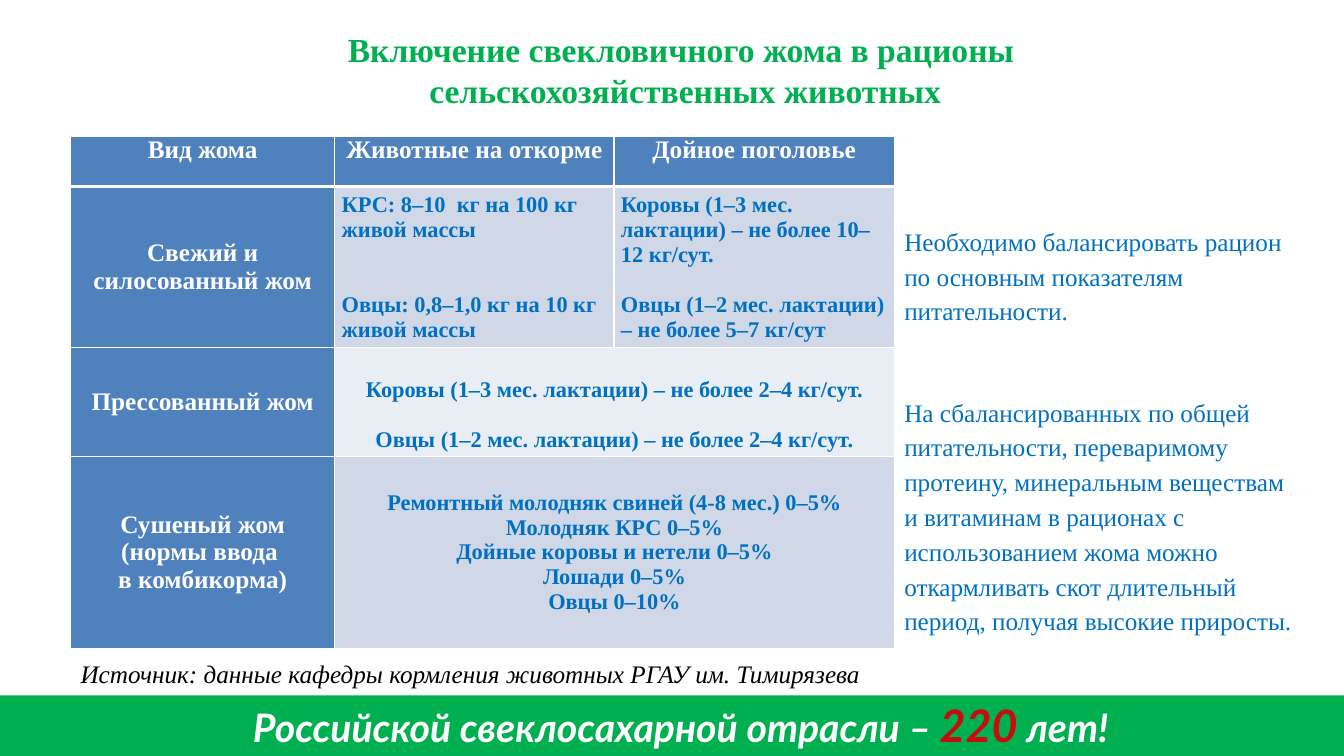
from lxml import etree
from pptx import Presentation
from pptx.dml.color import RGBColor
from pptx.enum.shapes import MSO_SHAPE as Shape
from pptx.enum.text import MSO_ANCHOR as Anchor, MSO_AUTO_SIZE as Auto, PP_ALIGN as Align
from pptx.oxml import parse_xml
from pptx.oxml.ns import nsdecls
from pptx.util import Inches, Pt

GREEN = RGBColor(0x00, 0xB0, 0x50)
RED = RGBColor(0xC8, 0x0B, 0x0E)
BLUE = RGBColor(0x00, 0x70, 0xC0)
HEAD = RGBColor(0x4F, 0x81, 0xBD)
BAND = RGBColor(0xD0, 0xD8, 0xE8)
PALE = RGBColor(0xE9, 0xED, 0xF4)
WHITE = RGBColor(0xFF, 0xFF, 0xFF)
BLACK = RGBColor(0, 0, 0)
SERIF = "Times New Roman"

TITLE = "Включение свекловичного жома в рационы \vсельскохозяйственных животных"
SOURCE = "Источник: данные кафедры кормления животных РГАУ им. Тимирязева"
SLOGAN = [("Российской свеклосахарной отрасли – ", 28, WHITE),
          ("220", 32, RED), (" лет!", 28, WHITE)]
NOTES = [
    "Необходимо балансировать рацион по основным показателям питательности.",
    "На сбалансированных по общей питательности, переваримому протеину, "
    "минеральным веществам и витаминам в рационах с использованием жома можно "
    "откармливать скот длительный период, получая высокие приросты.",
]

HEADS = ["Вид жома", "Животные на откорме", "Дойное поголовье"]
# kind of pulp, fill, anchor, then (paragraphs, gap in points) for each cell
FEEDS = [
    (["Свежий и силосованный жом"], BAND, Anchor.MIDDLE, [
        (["КРС: 8–10  кг на 100 кг живой массы",
          "Овцы: 0,8–1,0 кг на 10 кг живой массы"], 36),
        (["Коровы (1–3 мес. лактации) – не более 10–12 кг/сут.",
          "Овцы (1–2 мес. лактации) – не более 5–7 кг/сут"], 18)]),
    (["Прессованный жом"], PALE, Anchor.BOTTOM, [
        (["Коровы (1–3 мес. лактации) – не более 2–4 кг/сут.",
          "Овцы (1–2 мес. лактации) – не более 2–4 кг/сут."], 18)]),
    (["Сушеный жом (нормы ввода ", "в комбикорма)"], BAND, Anchor.MIDDLE, [
        (["Ремонтный молодняк свиней (4-8 мес.) 0–5%",
          "Молодняк КРС 0–5%",
          "Дойные коровы и нетели 0–5%",
          "Лошади 0–5%",
          "Овцы 0–10%"], 0)]),
]
COLS = [2.62, 2.77, 2.78]
ROWS = [0.5, 1.6, 1.08, 1.9]


def style(run, size, color, font=SERIF, bold=False, italic=False):
    run.font.name, run.font.size = font, Pt(size)
    run.font.bold, run.font.italic = bold, italic
    run.font.color.rgb = color


def write(frame, lines, size, color, align=Align.LEFT, gap=0, pitch=None, **look):
    """Fill a text frame with paragraphs, set apart by gap points."""
    frame.word_wrap = True
    for i, line in enumerate(lines):
        para = frame.paragraphs[0] if i == 0 else frame.add_paragraph()
        para.text = line
        para.alignment = align
        para.space_before = Pt(gap if i else 0)
        if pitch:
            para.line_spacing = pitch
        for run in para.runs:
            style(run, size, color, **look)


def add_box(left, top, width, height):
    box = slide.shapes.add_textbox(*map(Inches, (left, top, width, height)))
    return box.text_frame


def edge(cell, base):
    """Draw white cell borders, the lower one base points wide."""
    props = cell._tc.get_or_add_tcPr()
    for side, width in (("L", 1), ("R", 1), ("T", 1), ("B", base)):
        props.append(parse_xml(
            f'<a:ln{side} {nsdecls("a")} w="{Pt(width)}"><a:solidFill>'
            f'<a:srgbClr val="{WHITE}"/></a:solidFill></a:ln{side}>'))


def fill_cell(cell, lines, size, color, back, anchor=Anchor.MIDDLE, base=1, **form):
    edge(cell, base)
    cell.fill.solid()
    cell.fill.fore_color.rgb = back
    cell.margin_left = cell.margin_right = Inches(0.07)
    cell.margin_top = 0
    cell.margin_bottom = Inches(0.04 if anchor == Anchor.BOTTOM else 0)
    cell.vertical_anchor = anchor
    write(cell.text_frame, lines, size, color, bold=True, **form)


deck = Presentation()
deck.slide_width, deck.slide_height = Inches(13.33), Inches(7.5)
slide = deck.slides.add_slide(deck.slide_layouts[5])

title = slide.shapes.title
title.left, title.top, title.width, title.height = map(Inches, (1.95, 0.28, 9.69, 0.82))
title.text_frame.auto_size = Auto.NONE
title.text_frame.vertical_anchor = Anchor.MIDDLE
write(title.text_frame, [TITLE], 24, GREEN, Align.CENTER, bold=True)

band = slide.shapes.add_shape(Shape.RECTANGLE, 0, Inches(6.9), deck.slide_width, Inches(0.6))
band.shadow.inherit = False
band.fill.solid()
band.fill.fore_color.rgb = GREEN
band.line.fill.background()

slogan = add_box(2.41, 6.77, 9.24, 0.72)
slogan.word_wrap = True
slogan.paragraphs[0].line_spacing = 1.2
for text, size, color in SLOGAN:
    run = slogan.paragraphs[0].add_run()
    run.text = text
    style(run, size, color, font="Lato", bold=True, italic=True)

table = slide.shapes.add_table(
    len(ROWS), len(COLS), Inches(0.7), Inches(1.35),
    Inches(sum(COLS)), Inches(sum(ROWS))).table
for col, width in zip(table.columns, COLS):
    col.width = Inches(width)
for row, height in zip(table.rows, ROWS):
    row.height = Inches(height)

for c, head in enumerate(HEADS):
    fill_cell(table.cell(0, c), [head], 18, WHITE, HEAD, Anchor.TOP, 3, align=Align.CENTER)
for r, (kind, back, anchor, norms) in enumerate(FEEDS, 1):
    fill_cell(table.cell(r, 0), kind, 18, WHITE, HEAD, align=Align.CENTER)
    whole = len(norms) == 1
    if whole:
        table.cell(r, 1).merge(table.cell(r, 2))
    for c, (lines, gap) in enumerate(norms, 1):
        fill_cell(table.cell(r, c), lines, 16, BLUE, back, anchor, gap=gap,
                  align=Align.CENTER if whole else Align.LEFT)

write(add_box(0.7, 6.48, 9.95, 0.4), [SOURCE], 18, BLACK, italic=True)
write(add_box(8.87, 2.15, 4.05, 4.08), NOTES, 18, BLUE, gap=47.5, pitch=1.15)

deck.save("out.pptx")
